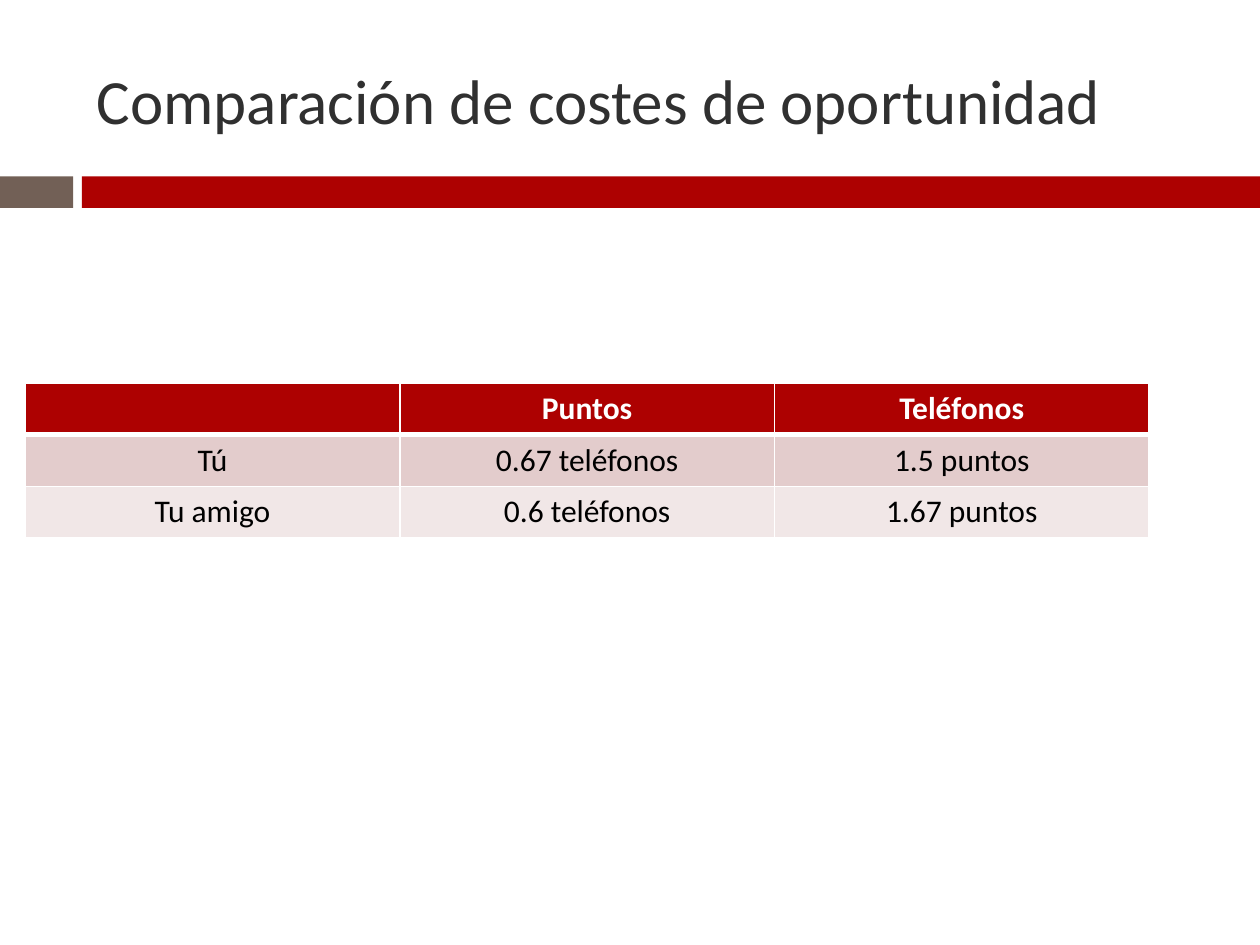
"""Build a slide comparing opportunity costs in a table."""
import pptx
import pptx.util
import pptx.dml.color
import pptx.enum.shapes
import pptx.enum.text
import pptx.oxml
import pptx.oxml.ns

Inches = pptx.util.Inches
Pt = pptx.util.Pt
RGBColor = pptx.dml.color.RGBColor

WHITE = RGBColor(0xFF, 0xFF, 0xFF)
BLACK = RGBColor(0, 0, 0)
RED = RGBColor(0xAD, 0x01, 0x01)
BROWN = RGBColor(0x72, 0x60, 0x56)
CHARCOAL = RGBColor(0x30, 0x30, 0x30)
ROSE = RGBColor(0xE3, 0xCC, 0xCC)
PALE_ROSE = RGBColor(0xF1, 0xE7, 0xE7)

FONT = "Calibri"
TITLE = "Comparación de costes de oportunidad"
BANDS = [(0, 0.58, BROWN), (0.65, 9.35, RED)]
COSTS = [
    ("", "Puntos", "Teléfonos"),
    ("Tú", "0.67 teléfonos", "1.5 puntos"),
    ("Tu amigo", "0.6 teléfonos", "1.67 puntos"),
]
ROW_FILLS = [RED, ROSE, PALE_ROSE]
TABLE_WIDTH = 8.92
ROW_HEIGHT = 0.41


def style_text(para, size, color, bold=False):
    para.font.name = FONT
    para.font.size = Pt(size)
    para.font.color.rgb = color
    para.font.bold = bold


def add_borders(cell, widths):
    properties = cell._tc.get_or_add_tcPr()
    for side, width in widths.items():
        properties.append(pptx.oxml.parse_xml(
            f'<a:ln{side} {pptx.oxml.ns.nsdecls("a")} w="{Pt(width)}">'
            f'<a:solidFill><a:srgbClr val="{WHITE}"/></a:solidFill></a:ln{side}>'))


def add_bands(slide):
    for left, width, color in BANDS:
        band = slide.shapes.add_shape(
            pptx.enum.shapes.MSO_SHAPE.RECTANGLE,
            Inches(left), Inches(1.4), Inches(width), Inches(0.25))
        band.shadow.inherit = False
        band.fill.solid()
        band.fill.fore_color.rgb = color
        band.line.fill.background()


def add_title(slide):
    box = slide.shapes.add_textbox(Inches(0.67), Inches(0.25), Inches(8.92), Inches(1.08))
    frame = box.text_frame
    frame.word_wrap = True
    frame.vertical_anchor = pptx.enum.text.MSO_ANCHOR.MIDDLE
    frame.text = TITLE
    style_text(frame.paragraphs[0], 36, CHARCOAL)


def add_cost_table(slide):
    table = slide.shapes.add_table(
        len(COSTS), len(COSTS[0]), Inches(0.2), Inches(3.04),
        Inches(TABLE_WIDTH), Inches(ROW_HEIGHT * len(COSTS))).table
    for column in table.columns:
        column.width = Inches(TABLE_WIDTH / len(COSTS[0]))
    for row_index, (texts, color) in enumerate(zip(COSTS, ROW_FILLS)):
        table.rows[row_index].height = Inches(ROW_HEIGHT)
        header = row_index == 0
        widths = {"L": 1, "R": 1, "T": 3 if row_index == 1 else 1, "B": 3 if header else 1}
        for column_index, text in enumerate(texts):
            cell = table.cell(row_index, column_index)
            add_borders(cell, widths)
            cell.fill.solid()
            cell.fill.fore_color.rgb = color
            cell.text = text
            para = cell.text_frame.paragraphs[0]
            para.alignment = pptx.enum.text.PP_ALIGN.CENTER
            style_text(para, 18, WHITE if header else BLACK, header)


def main():
    deck = pptx.Presentation()
    deck.slide_width = Inches(10)
    deck.slide_height = Inches(7.5)
    slide = deck.slides.add_slide(deck.slide_layouts[6])
    add_bands(slide)
    add_title(slide)
    add_cost_table(slide)
    deck.save("out.pptx")


if __name__ == "__main__":
    main()
